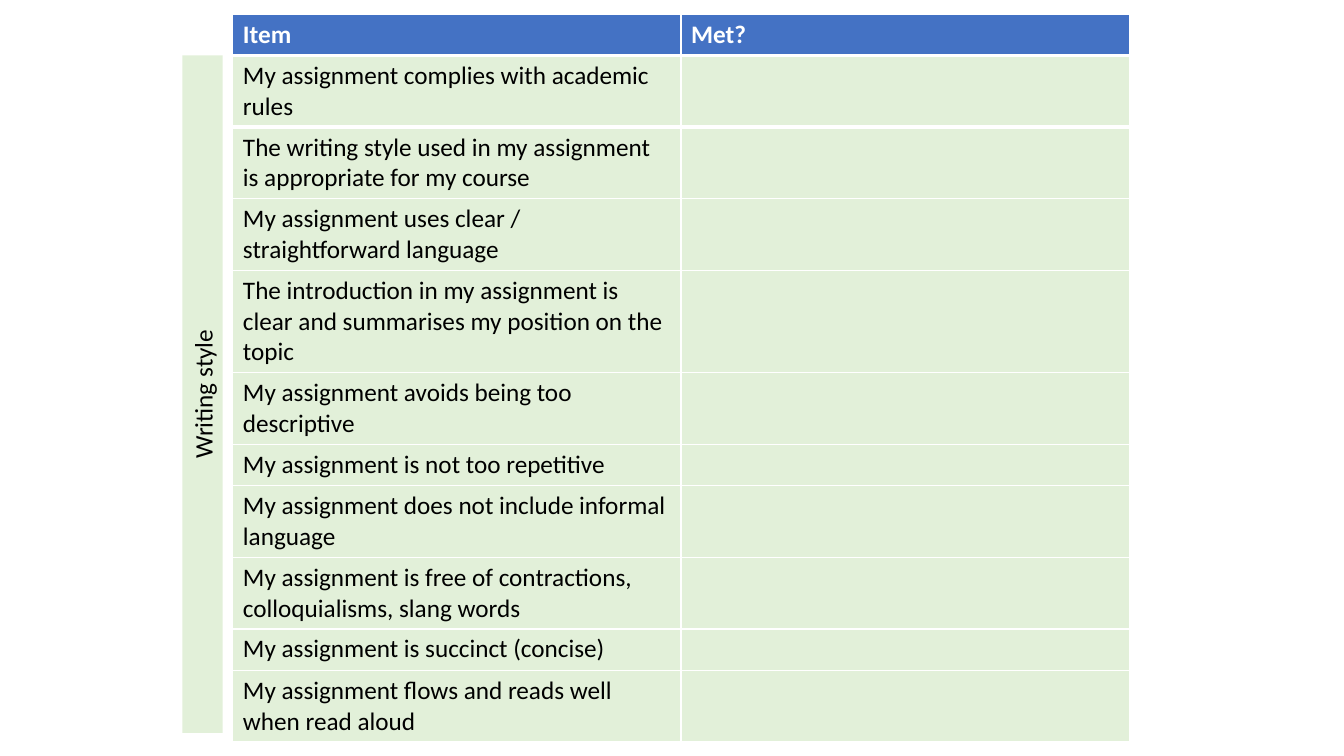
from lxml import etree
from pptx import Presentation
from pptx.dml.color import RGBColor
from pptx.enum.shapes import MSO_SHAPE
from pptx.enum.text import MSO_AUTO_SIZE, PP_ALIGN
from pptx.oxml.ns import qn
from pptx.util import Inches, Pt

RECTANGLE = MSO_SHAPE.RECTANGLE
CENTER = PP_ALIGN.CENTER
FIT_TEXT = MSO_AUTO_SIZE.SHAPE_TO_FIT_TEXT

WHITE = RGBColor(0xFF, 0xFF, 0xFF)
BLACK = RGBColor(0, 0, 0)
BLUE = RGBColor(0x44, 0x72, 0xC4)
PALE_GREEN = RGBColor(0xE2, 0xF0, 0xD9)

BODY_FORMAT = {"name": "Calibri", "size": Pt(18), "bold": False}
HEADER_FORMAT = {**BODY_FORMAT, "bold": True}

ROW_HEIGHTS = {1: 0.41, 2: 0.7, 3: 1.0}
HEADINGS = [("Item", 1)]
CRITERIA = [
    ("My assignment complies with academic rules", 2),
    ("The writing style used in my assignment is appropriate for my course", 2),
    ("My assignment uses clear / straightforward language", 2),
    ("The introduction in my assignment is clear and summarises my position on the topic", 3),
    ("My assignment avoids being too descriptive", 2),
    ("My assignment is not too repetitive", 1),
    ("My assignment does not include informal language", 2),
    ("My assignment is free of contractions, colloquialisms, slang words", 2),
    ("My assignment is succinct (concise)", 1),
    ("My assignment flows and reads well when read aloud", 2),
]


def write(paragraph, text, text_format, color):
    run = paragraph.add_run()
    run.text = text
    for attribute, value in text_format.items():
        setattr(run.font, attribute, value)
    run.font.color.rgb = color


def set_borders(cell, widths):
    properties = cell._tc.get_or_add_tcPr()
    for side in ("L", "R", "T", "B"):
        line = etree.SubElement(properties, qn("a:ln" + side), w=str(Pt(widths.get(side, 1))))
        fill = etree.SubElement(line, qn("a:solidFill"))
        etree.SubElement(fill, qn("a:srgbClr"), val=str(WHITE))


def add_checklist(slide, box, items, met_text, fill, text_format, color):
    left, top, width = box
    heights = [ROW_HEIGHTS[lines] for _, lines in items]
    checklist = slide.shapes.add_table(
        len(items), 2, Inches(left), Inches(top), Inches(width), Inches(sum(heights))
    ).table
    checklist.first_row = checklist.horz_banding = False
    for column in checklist.columns:
        column.width = Inches(width / 2)
    for index, (item, _) in enumerate(items):
        checklist.rows[index].height = Inches(heights[index])
        thick_sides = {"B": 3} if index == 0 else {"T": 3} if index == 1 else {}
        for column, text in enumerate((item, met_text)):
            cell = checklist.cell(index, column)
            set_borders(cell, thick_sides)
            cell.fill.solid()
            cell.fill.fore_color.rgb = fill
            if text:
                write(cell.text_frame.paragraphs[0], text, text_format, color)


def add_section_band(slide, box, title):
    left, top, width, height = box
    offset = (height - width) / 2
    band = slide.shapes.add_shape(
        RECTANGLE, Inches(left - offset), Inches(top + offset), Inches(height), Inches(width)
    )
    band.rotation = 270
    band.shadow.inherit = False
    band.fill.solid()
    band.fill.fore_color.rgb = PALE_GREEN
    band.line.fill.background()
    frame = band.text_frame
    frame.word_wrap = True
    frame.auto_size = FIT_TEXT
    frame.paragraphs[0].alignment = CENTER
    write(frame.paragraphs[0], title, BODY_FORMAT, BLACK)


def build_checklist_slide(slide, box):
    left, top, width = box
    band_width, gap = 0.4, 0.1
    body_top = top + ROW_HEIGHTS[1]
    body_height = sum(ROW_HEIGHTS[lines] for _, lines in CRITERIA)
    table_left = left + band_width + gap
    table_width = width - band_width - gap
    add_checklist(slide, (table_left, body_top, table_width), CRITERIA, "",
                  PALE_GREEN, BODY_FORMAT, BLACK)
    add_section_band(slide, (left, body_top, band_width, body_height), "Writing style")
    add_checklist(slide, (table_left, top, table_width), HEADINGS, "Met?",
                  BLUE, HEADER_FORMAT, WHITE)


def main():
    presentation = Presentation()
    presentation.slide_width = Inches(13.33)
    presentation.slide_height = Inches(7.5)
    slide = presentation.slides.add_slide(presentation.slide_layouts[6])
    build_checklist_slide(slide, (1.81, 0.14, 9.39))
    presentation.save("out.pptx")


if __name__ == "__main__":
    main()
